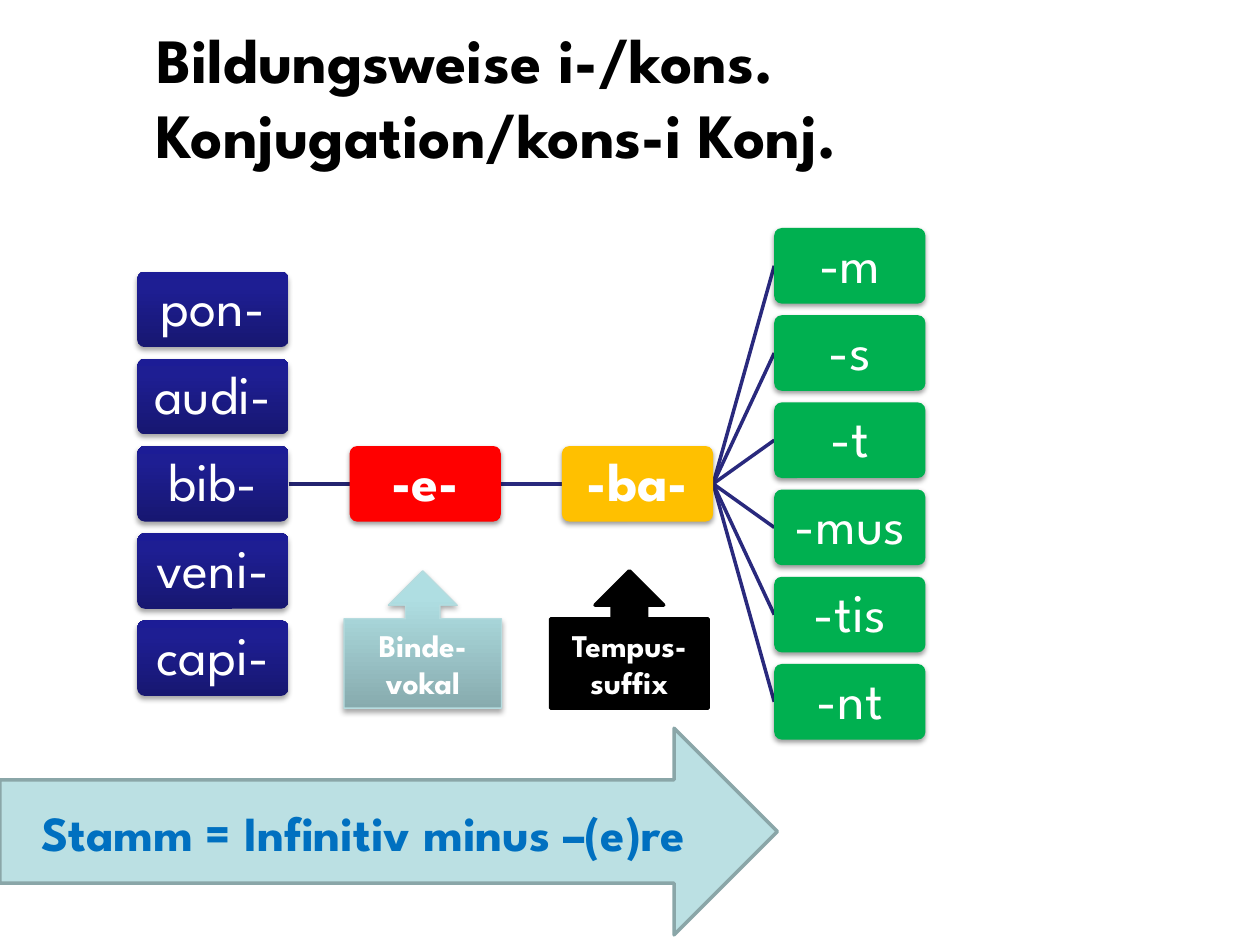
from lxml import etree
from pptx import Presentation
from pptx.dml.color import RGBColor
from pptx.enum.shapes import MSO_CONNECTOR, MSO_SHAPE
from pptx.enum.text import MSO_ANCHOR, PP_ALIGN
from pptx.oxml.ns import qn
from pptx.util import Inches, Pt

STRAIGHT = MSO_CONNECTOR.STRAIGHT
ROUNDED, ARROW = MSO_SHAPE.ROUNDED_RECTANGLE, MSO_SHAPE.RIGHT_ARROW
CALLOUT = MSO_SHAPE.UP_ARROW_CALLOUT
MIDDLE, CENTER, LEFT = MSO_ANCHOR.MIDDLE, PP_ALIGN.CENTER, PP_ALIGN.LEFT

FONT = "League Spartan"
TITLE = "Bildungsweise i-/kons. Konjugation/kons-i Konj."
RULE = "Stamm = Infinitiv minus –(e)re"
NAVY = [(0, "171771"), (80, "1E1E93"), (100, "1C1C96")]
TEAL = [(0, "87ABAE"), (80, "AFDEE2"), (100, "AFE0E4")]
SOFT, STRONG = (35, 1.8), (38, 1.6)  # shadow opacity in percent, distance in points

# word parts, fill, bold, shadow
COLUMNS = [
    (["pon-", "audi-", "bib-", "veni-", "capi-"], NAVY, False, SOFT),
    (["-e-"], "FF0000", True, STRONG),
    (["-ba-"], "FFC000", True, STRONG),
    (["-m", "-s", "-t", "-mus", "-tis", "-nt"], "00B050", False, STRONG),
]
# text, left, fill, line colour, line width, shadow
CALLOUTS = [
    ("Tempus-suffix", 4.37, "000000", "000000", 2, None),
    ("Binde-vokal", 2.73, TEAL, "B6DCDF", 0.75, SOFT),
]
LINKS = ["24246F", "29297D", "29297D"]

FIRST_LEFT, COLUMN_STEP = 1.09, 1.685
AXIS, ROW_STEP = 3.84, 0.692
BOX_WIDTH, BOX_HEIGHT = 1.2, 0.6


def color(value):
    return RGBColor.from_string(value)


def paint(shape, fill):
    """Fill with one colour, or with gradient stops running from bottom to top."""
    if isinstance(fill, str):
        shape.fill.solid()
        shape.fill.fore_color.rgb = color(fill)
        return
    shape.fill.gradient()
    shape.fill.gradient_angle = 90
    stops = shape._element.spPr.find(".//" + qn("a:gsLst"))
    for stop in list(stops):
        stops.remove(stop)
    for position, value in fill:
        stop = etree.SubElement(stops, qn("a:gs"), pos=str(position * 1000))
        etree.SubElement(stop, qn("a:srgbClr"), val=value)


def cast_shadow(shape, opacity, distance):
    effects = shape._element.spPr.find(qn("a:effectLst"))
    shadow = etree.SubElement(
        effects, qn("a:outerShdw"), blurRad=str(Pt(3.1)),
        dist=str(Pt(distance)), dir="5400000", rotWithShape="0")
    black = etree.SubElement(shadow, qn("a:srgbClr"), val="000000")
    etree.SubElement(black, qn("a:alpha"), val=str(opacity * 1000))


def write(shape, text, size, ink, bold=True, align=CENTER, inset=None, spacing=None):
    frame = shape.text_frame
    frame.word_wrap = True
    frame.vertical_anchor = MIDDLE
    if inset is not None:
        for side in ("left", "top", "right", "bottom"):
            setattr(frame, f"margin_{side}", Inches(inset))
    para = frame.paragraphs[0]
    para.alignment = align
    para.line_spacing = spacing
    span = para.add_run()
    span.text = text
    style = {"name": FONT, "size": Pt(size), "bold": bold}
    for name, value in style.items():
        setattr(span.font, name, value)
    span.font.color.rgb = color(ink)


def add_figure(page, kind, place, fill, line=None, shadow=None):
    shape = page.shapes.add_shape(kind, *map(Inches, place))
    shape.shadow.inherit = False
    paint(shape, fill)
    if line:
        shape.line.color.rgb = color(line[0])
        shape.line.width = Pt(line[1])
    else:
        shape.line.fill.background()
    if shadow:
        cast_shadow(shape, *shadow)
    return shape


def add_link(page, start, end, ink):
    link = page.shapes.add_connector(STRAIGHT, *map(Inches, start + end))
    link.line.color.rgb = color(ink)
    link.line.width = Pt(2)
    etree.SubElement(link._element.spPr, qn("a:effectLst"))


def row_centers(count):
    """Rows are spread evenly around the axis."""
    return [AXIS + (row - (count - 1) / 2) * ROW_STEP for row in range(count)]


def build():
    deck = Presentation()
    deck.slide_width, deck.slide_height = Inches(10), Inches(7.5)
    page = deck.slides.add_slide(deck.slide_layouts[6])

    title = page.shapes.add_textbox(*map(Inches, (1.14, 0.36, 8.05, 0.8)))
    write(title, TITLE, 36, "000000", align=LEFT)

    lefts = [FIRST_LEFT + column * COLUMN_STEP for column in range(len(COLUMNS))]
    for ink, left, target, column in zip(LINKS, lefts, lefts[1:], COLUMNS[1:]):
        for center in row_centers(len(column[0])):
            add_link(page, (left + BOX_WIDTH, AXIS), (target, center), ink)

    for left, (parts, fill, bold, shadow) in zip(lefts, COLUMNS):
        for part, center in zip(parts, row_centers(len(parts))):
            place = (left, center - BOX_HEIGHT / 2, BOX_WIDTH, BOX_HEIGHT)
            box = add_figure(page, ROUNDED, place, fill, shadow=shadow)
            box.adjustments[0] = 0.1
            write(box, part, 31, "FFFFFF", bold, inset=0.02, spacing=0.9)

    arrow = add_figure(page, ARROW, (0, 5.78, 6.17, 1.64), "BBE0E3", ("8AA6A8", 2))
    write(arrow, RULE, 28, "0070C0")

    for text, left, fill, ink, width, shadow in CALLOUTS:
        place = (left, 4.53, 1.25, 1.09)
        callout = add_figure(page, CALLOUT, place, fill, (ink, width), shadow)
        write(callout, text, 18, "FFFFFF")

    deck.save("out.pptx")


if __name__ == "__main__":
    build()
